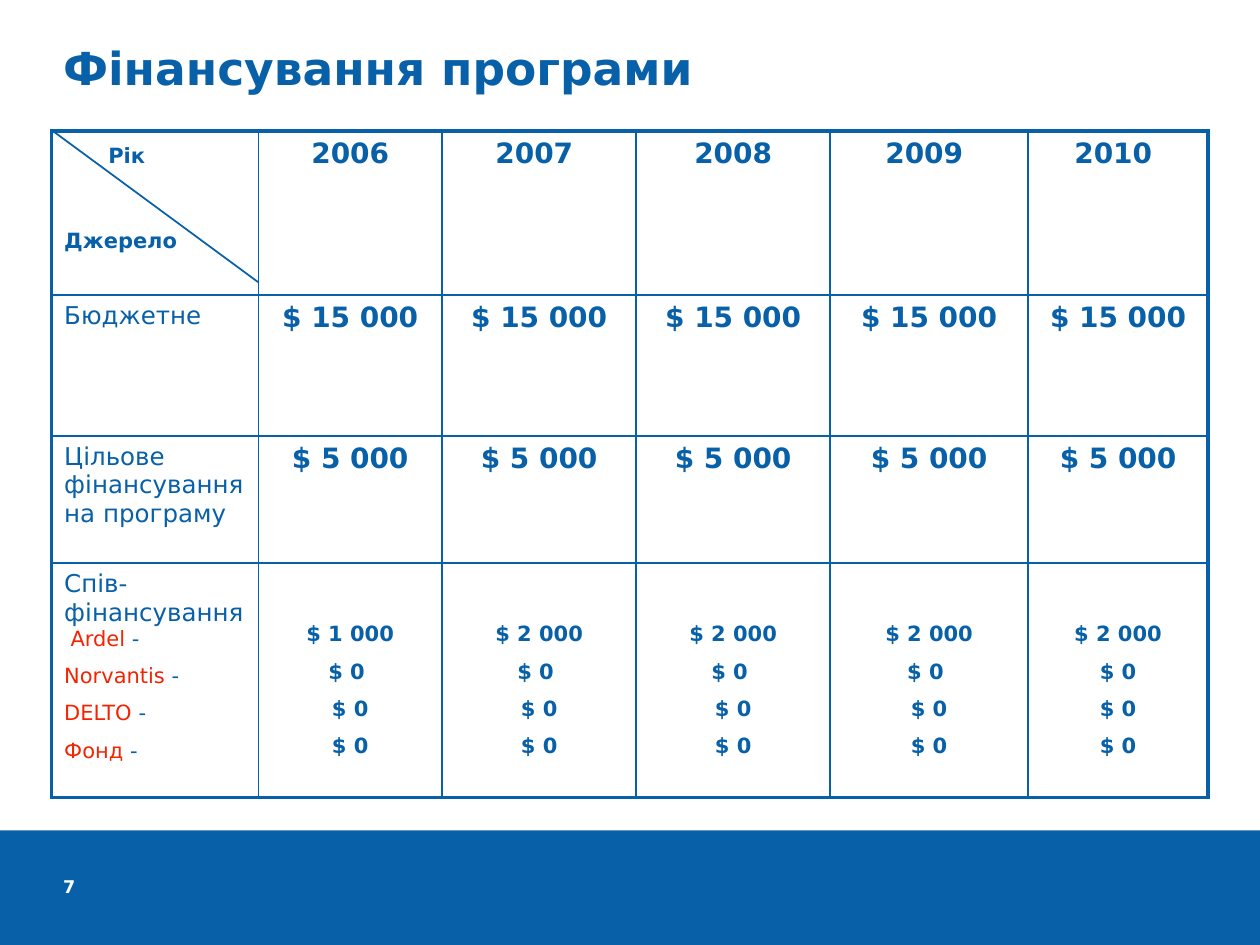
from lxml.etree import SubElement
from pptx import Presentation
from pptx.dml.color import RGBColor
from pptx.enum.shapes import MSO_CONNECTOR as Connector, MSO_SHAPE as Shape
from pptx.enum.text import MSO_ANCHOR as Anchor, MSO_AUTO_SIZE as AutoSize, PP_ALIGN as Align
from pptx.oxml.ns import qn
from pptx.util import Inches, Pt

BLUE, RED, WHITE = "0860A8", "F22402", "FFFFFF"
FONT = "DejaVu Sans"

TITLE = "Фінансування програми"
PAGE_NUMBER = "7"
CORNER = ("Рік", "Джерело")
YEARS = ["2006", "2007 ", "2008", "2009 ", "2010 "]
SOURCES = [("Бюджетне", "$ 15 000"), ("Цільове фінансування на програму", "$ 5 000")]
SHARED = "Спів-фінансування"
PARTNERS = ["Ardel", "Norvantis", "DELTO", "Фонд"]
PARTNER_SUMS = [
    ["$ 1 000", "$ 0 ", "$ 0", "$ 0"],
    ["$ 2 000", "$ 0 ", "$ 0", "$ 0"],
    ["$ 2 000", "$ 0 ", "$ 0", "$ 0"],
    ["$ 2 000", "$ 0 ", "$ 0", "$ 0"],
    ["$ 2 000", "$ 0", "$ 0", "$ 0"],
]

LEFT, TOP = 0.41, 1.04
COLUMNS = [1.64, 1.46, 1.54, 1.54, 1.57, 1.43]
ROWS = [1.3, 1.12, 1.01, 1.86]
THIN, THICK = 1, 2.25
PARTNER_GAP = 7.2


def paint(color_format, value):
    color_format.rgb = RGBColor.from_string(value)


def write(para, spans, size, bold=False, **layout):
    for name, value in layout.items():
        setattr(para, name, value)
    for text, color in spans:
        span = para.add_run()
        span.text = text
        for name, value in {"name": FONT, "size": Pt(size), "bold": bold}.items():
            setattr(span.font, name, value)
        paint(span.font.color, color)


def indent(para, width):
    para._p.get_or_add_pPr().set("marL", str(Inches(width)))


def set_frame(frame):
    flush = {"margin_left": 0, "margin_top": 0, "margin_right": 0, "margin_bottom": 0,
             "word_wrap": True, "auto_size": AutoSize.NONE, "vertical_anchor": Anchor.TOP}
    for name, value in flush.items():
        setattr(frame, name, value)


def add_borders(cell, widths):
    properties = cell._tc.get_or_add_tcPr()
    for side, width in zip("LRTB", widths):
        line = SubElement(properties, qn("a:ln" + side), w=str(Pt(width)))
        fill = SubElement(line, qn("a:solidFill"))
        SubElement(fill, qn("a:srgbClr"), val=BLUE)


def add_table(page):
    frame = page.shapes.add_table(len(ROWS), len(COLUMNS), Inches(LEFT), Inches(TOP),
                                  Inches(sum(COLUMNS)), Inches(sum(ROWS)))
    table = frame.table
    table.first_row = table.horz_banding = False
    for column, width in zip(table.columns, COLUMNS):
        column.width = Inches(width)
    for row, height in zip(table.rows, ROWS):
        row.height = Inches(height)
    last_row, last_column = len(ROWS) - 1, len(COLUMNS) - 1
    for r in range(len(ROWS)):
        for c in range(len(COLUMNS)):
            cell = table.cell(r, c)
            edges = (c == 0, c == last_column, r == 0, r == last_row)
            add_borders(cell, [THICK if edge else THIN for edge in edges])
            cell.fill.background()
    return table


def fill_table(table):
    corner = table.cell(0, 0)
    corner.margin_top = Inches(0.1)
    year, source = corner.text_frame.paragraphs[0], corner.text_frame.add_paragraph()
    indent(year, 0.35)
    write(year, [(CORNER[0], BLUE)], 12, True)
    write(source, [(CORNER[1], BLUE)], 12, True, space_before=Pt(34.4))

    amounts = [YEARS] + [[amount] * len(YEARS) for _, amount in SOURCES]
    for r, values in enumerate(amounts):
        for c, value in enumerate(values, 1):
            para = table.cell(r, c).text_frame.paragraphs[0]
            write(para, [(value, BLUE)], 16, True, alignment=Align.CENTER)

    names = [name for name, _ in SOURCES] + [SHARED]
    for r, name in enumerate(names, 1):
        write(table.cell(r, 0).text_frame.paragraphs[0], [(name, BLUE)], 14)

    last_row = len(ROWS) - 1
    partner_frame = table.cell(last_row, 0).text_frame
    for i, partner in enumerate(PARTNERS):
        para = partner_frame.add_paragraph()
        if i == 0:
            indent(para, 0.05)
        write(para, [(partner, RED), (" -", BLUE)], 12,
              space_before=Pt(PARTNER_GAP if i else 0))

    for c, sums in enumerate(PARTNER_SUMS, 1):
        cell = table.cell(last_row, c)
        cell.margin_top = Inches(0.47)
        for i, value in enumerate(sums):
            frame = cell.text_frame
            para = frame.add_paragraph() if i else frame.paragraphs[0]
            write(para, [(value, BLUE)], 12, True, alignment=Align.CENTER,
                  space_before=Pt(PARTNER_GAP if i else 0))


def main():
    deck = Presentation()
    deck.slide_width, deck.slide_height = Inches(10), Inches(7.5)
    page = deck.slides.add_slide(deck.slide_layouts[5])

    footer = page.shapes.add_shape(Shape.RECTANGLE, 0, Inches(6.59), Inches(10), Inches(0.91))
    footer.shadow.inherit = False
    footer.fill.solid()
    paint(footer.fill.fore_color, BLUE)
    footer.line.fill.background()

    number = page.shapes.add_textbox(Inches(0.5), Inches(6.95), Inches(0.45), Inches(0.33))
    set_frame(number.text_frame)
    write(number.text_frame.paragraphs[0], [(PAGE_NUMBER, WHITE)], 10, True)

    title = page.shapes.title
    place = {"left": 0.5, "top": 0.32, "width": 9.01, "height": 0.97}
    for name, value in place.items():
        setattr(title, name, Inches(value))
    set_frame(title.text_frame)
    write(title.text_frame.paragraphs[0], [(TITLE, BLUE)], 26, True, alignment=Align.LEFT)

    fill_table(add_table(page))

    diagonal = page.shapes.add_connector(Connector.STRAIGHT, Inches(0.42), Inches(TOP),
                                         Inches(LEFT + COLUMNS[0]), Inches(2.24))
    paint(diagonal.line.color, BLUE)
    diagonal.line.width = Pt(THIN)
    SubElement(diagonal._element.spPr, qn("a:effectLst"))

    deck.save("out.pptx")


if __name__ == "__main__":
    main()
